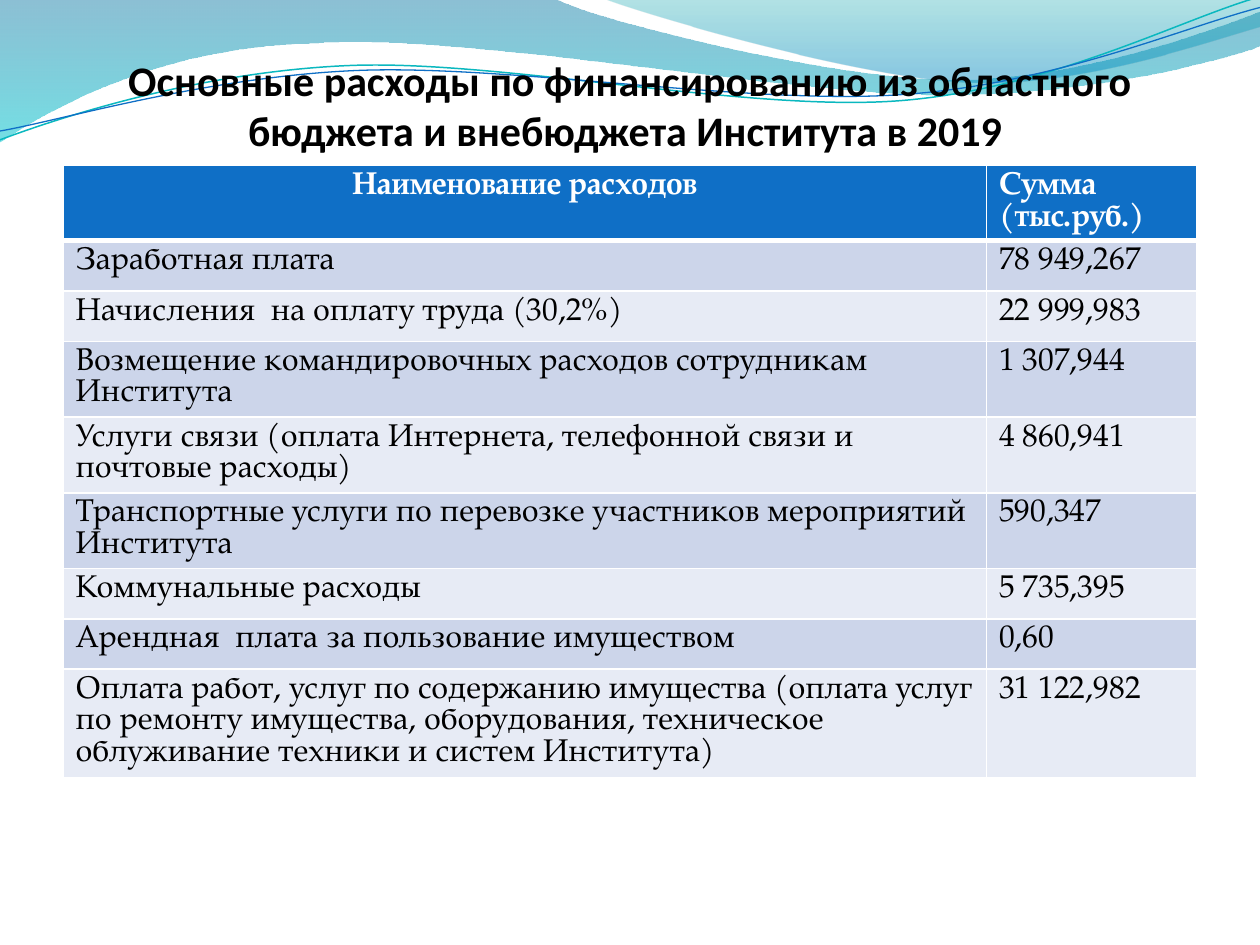
import math
from typing import NamedTuple, Optional

import lxml.etree
import pptx
import pptx.dml.color
import pptx.enum.text
import pptx.oxml.ns
import pptx.util

Inches, Pt, qn = pptx.util.Inches, pptx.util.Pt, pptx.oxml.ns.qn
ALIGN = pptx.enum.text.PP_ALIGN
WIDTH, HEIGHT = 10, 7.5
MARGIN = 0.05 * WIDTH


class Stop(NamedTuple):
    position: float
    color: str
    opacity: int


class Wave(NamedTuple):
    """Segments of one point are straight, segments of three are Bezier curves."""
    start: tuple
    segments: list
    gradient: Optional[list] = None
    line: Optional[tuple] = None
    tilt: float = 0
    center: tuple = (0, 0)


class Expense(NamedTuple):
    name: str
    amount: str
    height: float


WAVES = [
    Wave((0, 0), [
        [(4.4, -0.01)],
        [(4.76, 0.17), (6.64, 0.63), (7.58, 0.63)],
        [(8.53, 0.63), (9.58, 0.26), (10, 0.09)],
        [(10.01, 0.36)],
        [(9.83, 0.44), (8.7, 0.76), (7.46, 0.75)],
        [(6.22, 0.75), (3.82, 0.28), (2.57, 0.34)],
        [(1.29, 0.36), (0.46, 0.83), (-0.01, 1.13)],
        [(0, 0)],
    ], gradient=[Stop(0, "0074A1", 45), Stop(1, "00C6CF", 55)]),
    Wave((4.79, -0.01), [
        [(5.09, 0.11), (6.82, 0.62), (7.69, 0.65)],
        [(8.56, 0.69), (9.61, 0.32), (10, 0.21)],
        [(10, 0)],
        [(4.79, -0.01)],
    ], gradient=[Stop(0, "00A1A9", 30), Stop(0.8, "008BBF", 45)]),
    Wave((0, 1.11), [
        [(0.48, 0.93), (1.58, 0.57), (2.77, 0.52)],
        [(3.95, 0.47), (5.93, 0.89), (7.13, 0.8)],
        [(8.33, 0.71), (9.38, 0.15), (9.98, -0.02)],
    ], line=("0AB8BF", 0.85), tilt=-2.7, center=(4.99, 0.57)),
    Wave((0, 1.04), [
        [(0.47, 0.96), (1.64, 0.61), (2.83, 0.56)],
        [(4.03, 0.51), (5.97, 0.84), (7.17, 0.75)],
        [(8.36, 0.67), (9.41, 0.21), (10, 0.06)],
    ], line=("0F6FC6", 0.75), tilt=-2.7, center=(5, 0.59)),
]

TITLE = "Основные расходы по финансированию из областного бюджета и внебюджета Института в 2019 "
ONE_LINE, TWO_LINES, THREE_LINES = 0.4, 0.6, 0.86
HEADER = Expense("Наименование расходов", "Сумма (тыс.руб.)", 0.59)
EXPENSES = [
    Expense("Заработная плата", "78 949,267", ONE_LINE),
    Expense("Начисления  на оплату труда (30,2%)", "22 999,983", ONE_LINE),
    Expense("Возмещение командировочных расходов сотрудникам Института", "1 307,944", TWO_LINES),
    Expense("Услуги связи (оплата Интернета, телефонной связи и почтовые расходы)",
            "4 860,941", TWO_LINES),
    Expense("Транспортные услуги по перевозке участников мероприятий Института",
            "590,347", TWO_LINES),
    Expense("Коммунальные расходы", "5 735,395", ONE_LINE),
    Expense("Арендная  плата за пользование имуществом", "0,60", ONE_LINE),
    Expense("Оплата работ, услуг по содержанию имущества (оплата услуг по ремонту имущества, "
            "оборудования, техническое облуживание техники и систем Института)",
            "31 122,982", THREE_LINES),
]
HEADER_FILL, BAND_FILLS = "0F6FC6", ("CCD5EA", "E7EBF5")


def rgb(color: str) -> pptx.dml.color.RGBColor:
    return pptx.dml.color.RGBColor.from_string(color)


def set_format(target, values: dict) -> None:
    for attribute, value in values.items():
        setattr(target, attribute, value)


def write(paragraph, text: str, color: str, align, **font_values) -> None:
    paragraph.alignment = align
    run = paragraph.add_run()
    run.text = text
    set_format(run.font, font_values)
    run.font.color.rgb = rgb(color)


def untilt(point: tuple, wave: Wave) -> tuple:
    """Undo the tilt that the shape's own rotation adds; give the result in EMU."""
    angle = math.radians(-wave.tilt)
    dx, dy = point[0] - wave.center[0], point[1] - wave.center[1]
    return (Inches(wave.center[0] + dx * math.cos(angle) - dy * math.sin(angle)),
            Inches(wave.center[1] + dx * math.sin(angle) + dy * math.cos(angle)))


def bend(shape, segments: list) -> None:
    """Merge every three line steps of a curved segment into one Bezier step."""
    steps = iter(list(shape._element.iter(qn("a:lnTo"))))
    for segment in segments:
        first, *others = [next(steps) for _ in segment]
        if others:
            first.tag = qn("a:cubicBezTo")
        for step in others:
            first.append(step[0])
            step.getparent().remove(step)


def draw_wave(slide, wave: Wave) -> None:
    points = [untilt(point, wave) for segment in wave.segments for point in segment]
    builder = slide.shapes.build_freeform(*untilt(wave.start, wave))
    builder.add_line_segments(points, close=wave.gradient is not None)
    shape = builder.convert_to_shape()
    bend(shape, wave.segments)
    shape.shadow.inherit = False
    shape.rotation = wave.tilt % 360
    if wave.line:
        shape.fill.background()
        color, width = wave.line
        shape.line.color.rgb = rgb(color)
        shape.line.width = Pt(width)
        return
    shape.line.fill.background()
    shape.fill.gradient()
    shape.fill.gradient_angle = 270
    for target, stop in zip(shape.fill.gradient_stops, wave.gradient):
        target.position = stop.position
        target.color.rgb = rgb(stop.color)
    for node, stop in zip(shape._element.spPr.iter(qn("a:srgbClr")), wave.gradient):
        lxml.etree.SubElement(node, qn("a:alpha"), val=str(stop.opacity * 1000))


def place_title(slide) -> None:
    title = slide.shapes.title
    set_format(title, dict(left=Inches(MARGIN), top=Inches(0.77),
                           width=Inches(WIDTH - 2 * MARGIN), height=Inches(0.46)))
    set_format(title.text_frame, dict(
        margin_left=0, margin_right=0, margin_top=Inches(0.05), margin_bottom=0,
        word_wrap=True, auto_size=pptx.enum.text.MSO_AUTO_SIZE.NONE,
        vertical_anchor=pptx.enum.text.MSO_ANCHOR.BOTTOM))
    write(title.text_frame.paragraphs[0], TITLE, "000000", ALIGN.CENTER,
          name="Calibri", size=Pt(24), bold=True)
    # Bring the title in front of the waves
    slide.shapes._spTree.append(title._element)


def draw_borders(cell, widths: dict) -> None:
    properties = cell._tc.get_or_add_tcPr()
    for side, width in widths.items():
        border = lxml.etree.SubElement(properties, qn(f"a:ln{side}"), w=str(Pt(width)))
        fill = lxml.etree.SubElement(border, qn("a:solidFill"))
        lxml.etree.SubElement(fill, qn("a:srgbClr"), val="FFFFFF")


def draw_expenses(slide) -> None:
    rows = [HEADER, *EXPENSES]
    table = slide.shapes.add_table(len(rows), 2, Inches(MARGIN), Inches(1.31),
                                   Inches(WIDTH - 2 * MARGIN),
                                   Inches(sum(row.height for row in rows))).table
    for column, width in zip(table.columns, (7.33, 1.67)):
        column.width = Inches(width)
    for index, expense in enumerate(rows):
        table.rows[index].height = Inches(expense.height)
        is_header = index == 0
        fill = HEADER_FILL if is_header else BAND_FILLS[(index - 1) % 2]
        for column, text in enumerate((expense.name, expense.amount)):
            cell = table.cell(index, column)
            draw_borders(cell, {"L": 1, "R": 1, "T": 3 if index == 1 else 1,
                                "B": 3 if is_header else 1})
            cell.fill.solid()
            cell.fill.fore_color.rgb = rgb(fill)
            paragraph = cell.text_frame.paragraphs[0]
            paragraph.line_spacing = Pt(18)
            write(paragraph, text, "FFFFFF" if is_header else "000000",
                  ALIGN.CENTER if is_header and column == 0 else ALIGN.LEFT,
                  name="TeX Gyre Pagella", size=Pt(18), bold=is_header)


def main() -> None:
    deck = pptx.Presentation()
    set_format(deck, dict(slide_width=Inches(WIDTH), slide_height=Inches(HEIGHT)))
    slide = deck.slides.add_slide(deck.slide_layouts.get_by_name("Title Only"))
    # Decorative waves along the top edge
    for wave in WAVES:
        draw_wave(slide, wave)
    # Heading and expense table
    place_title(slide)
    draw_expenses(slide)
    deck.save("out.pptx")


if __name__ == "__main__":
    main()
